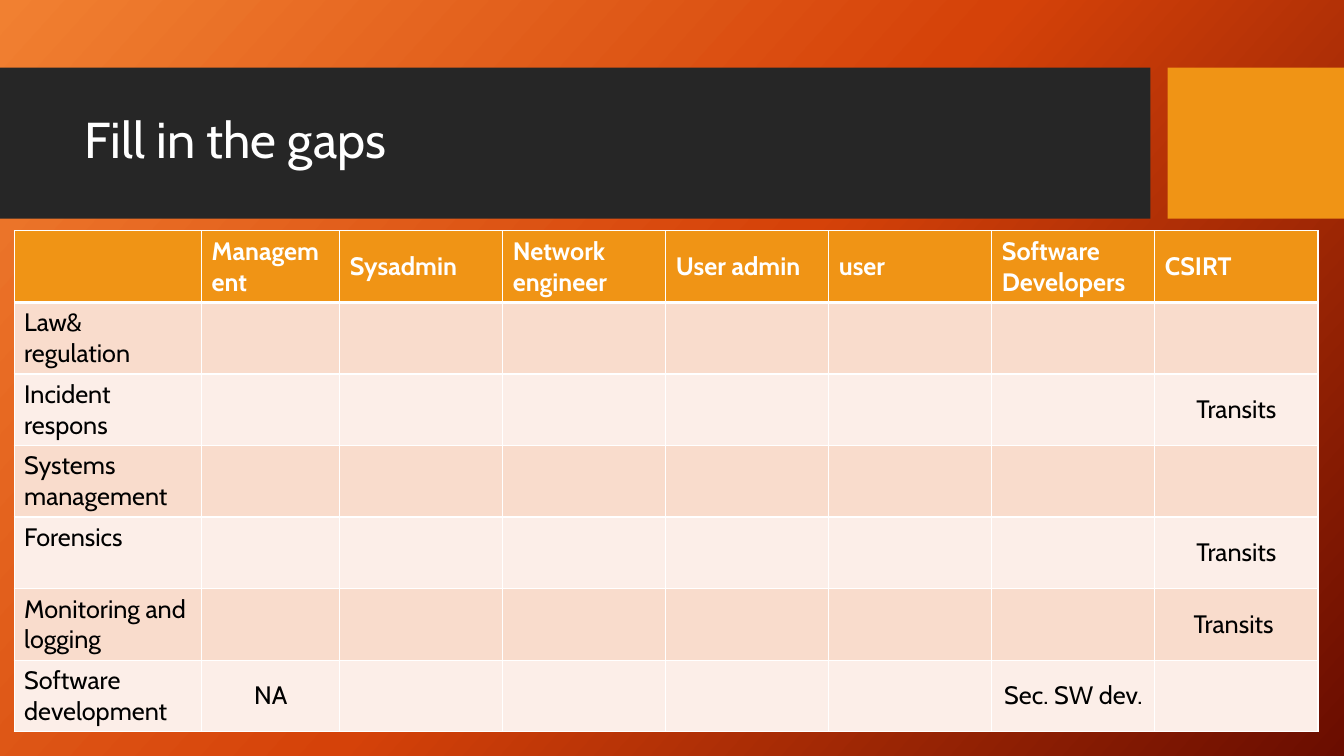
"""Build the 'Fill in the gaps' slide with its training table."""
import copy

import pptx
import pptx.dml.color
import pptx.enum.shapes
import pptx.enum.text
import pptx.oxml.ns
import pptx.util
from lxml import etree

Inches = pptx.util.Inches
Pt = pptx.util.Pt
RGBColor = pptx.dml.color.RGBColor
Align = pptx.enum.text.PP_ALIGN
Anchor = pptx.enum.text.MSO_ANCHOR
qn = pptx.oxml.ns.qn

TITLE = "Fill in the gaps"
ROLES = ["Management", "Sysadmin", "Network engineer", "User admin", "user",
         "Software Developers", "CSIRT"]
TOPICS = [
    ("Law& regulation", {}),
    ("Incident respons", {"CSIRT": "Transits"}),
    ("Systems management", {}),
    ("Forensics", {"CSIRT": "Transits"}),
    ("Monitoring and logging", {"CSIRT": "Transits "}),
    ("Software development", {"Management": "NA", "Software Developers": "Sec. SW dev."}),
]

FONT = "Cabin"
WHITE = RGBColor(0xFF, 0xFF, 0xFF)
BLACK = RGBColor(0, 0, 0)
CHARCOAL = RGBColor(0x26, 0x26, 0x26)
ORANGE = RGBColor(0xF0, 0x94, 0x15)
BANDS = [RGBColor(0xF9, 0xDC, 0xCC), RGBColor(0xFC, 0xEE, 0xE8)]
GRADIENT = [(0, RGBColor(0xF1, 0x80, 0x31)), (0.5, RGBColor(0xD5, 0x42, 0x09)),
            (1, RGBColor(0x6A, 0x0D, 0x00))]
GRADIENT_ANGLE = 360 - 42

BLOCKS = [(0, 11.41, CHARCOAL), (11.58, 1.75, ORANGE)]
BLOCK_TOP, BLOCK_HEIGHT = 0.67, 1.5
TABLE_LEFT, TABLE_TOP, ROW_HEIGHT = 0.14, 2.29, 0.71
COLUMN_WIDTHS = [1.86, 1.37] + [1.617] * 6


def write(frame, text, size=18, color=BLACK, bold=False, align=Align.LEFT, spacing=None):
    """Put one formatted paragraph into a text frame."""
    para = frame.paragraphs[0]
    para.alignment = align
    if spacing:
        para.line_spacing = spacing
    para.font.size = Pt(size)
    if text:
        span = para.add_run()
        span.text = text
        span.font.name = FONT
        span.font.size = Pt(size)
        span.font.bold = bold
        span.font.color.rgb = color


def paint_background(page):
    """Fill the page with the three-stop gradient."""
    fill = page.background.fill
    fill.gradient()
    fill.gradient_angle = GRADIENT_ANGLE
    stops = next(page.element.iter(qn("a:gsLst")))
    stops.insert(1, copy.deepcopy(stops[0]))
    for stop, (position, color) in zip(fill.gradient_stops, GRADIENT):
        stop.position = position
        stop.color.rgb = color


def add_borders(cell, bottom):
    """Draw white lines around a cell."""
    properties = cell._tc.get_or_add_tcPr()
    widths = {"lnL": 1, "lnR": 1, "lnT": 1, "lnB": bottom}
    for index, (side, width) in enumerate(widths.items()):
        line = etree.Element(qn(f"a:{side}"), w=str(Pt(width)))
        solid = etree.SubElement(line, qn("a:solidFill"))
        etree.SubElement(solid, qn("a:srgbClr"), val=str(WHITE))
        properties.insert(index, line)


def fill_cell(cell, text, row, column):
    """Format a cell by its place in the table."""
    header = row == 0
    label = column == 0 and not header
    cell.fill.solid()
    cell.fill.fore_color.rgb = ORANGE if header else BANDS[(row - 1) % 2]
    cell.vertical_anchor = Anchor.TOP if label else Anchor.MIDDLE
    write(cell.text_frame, text, color=WHITE if header else BLACK, bold=header,
          align=Align.LEFT if header or label else Align.CENTER)
    add_borders(cell, bottom=3 if header else 1)


def add_training_table(page):
    """Add the table of topics against roles."""
    rows = [[""] + ROLES]
    rows += [[topic] + [entries.get(role, "") for role in ROLES] for topic, entries in TOPICS]
    table = page.shapes.add_table(
        len(rows), len(COLUMN_WIDTHS), Inches(TABLE_LEFT), Inches(TABLE_TOP),
        Inches(sum(COLUMN_WIDTHS)), Inches(ROW_HEIGHT * len(rows))).table
    for column, width in zip(table.columns, COLUMN_WIDTHS):
        column.width = Inches(width)
    for row, texts in enumerate(rows):
        table.rows[row].height = Inches(ROW_HEIGHT)
        for column, text in enumerate(texts):
            fill_cell(table.cell(row, column), text, row, column)


def main():
    """Create and save the deck."""
    deck = pptx.Presentation()
    deck.slide_width, deck.slide_height = Inches(13.33), Inches(7.5)
    page = deck.slides.add_slide(deck.slide_layouts[6])
    paint_background(page)
    for left, width, color in BLOCKS:
        block = page.shapes.add_shape(
            pptx.enum.shapes.MSO_SHAPE.RECTANGLE, Inches(left), Inches(BLOCK_TOP),
            Inches(width), Inches(BLOCK_HEIGHT))
        block.shadow.inherit = False
        block.fill.solid()
        block.fill.fore_color.rgb = color
        block.line.fill.background()
    box = page.shapes.add_textbox(Inches(0.74), Inches(0.82), Inches(10.51), Inches(1.18))
    box.text_frame.word_wrap = True
    box.text_frame.vertical_anchor = Anchor.MIDDLE
    write(box.text_frame, TITLE, size=36, color=WHITE, spacing=0.9)
    add_training_table(page)
    deck.save("out.pptx")


if __name__ == "__main__":
    main()
